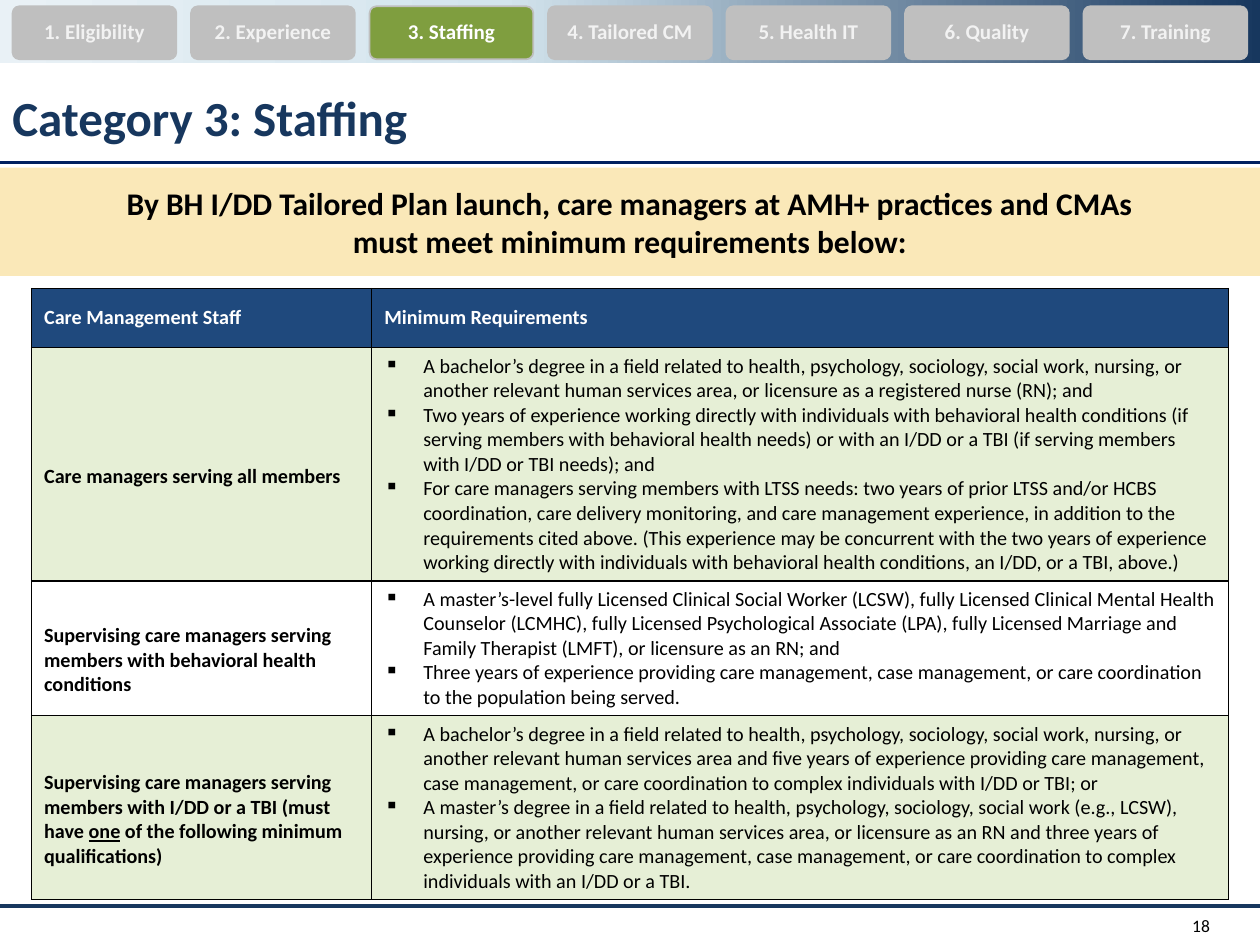
from collections import namedtuple

from lxml import etree
from pptx import Presentation
from pptx.dml.color import RGBColor
from pptx.enum.shapes import MSO_CONNECTOR, MSO_SHAPE
from pptx.enum.text import MSO_ANCHOR, PP_ALIGN
from pptx.oxml.ns import qn
from pptx.util import Inches, Pt

RECT, ROUNDED = MSO_SHAPE.RECTANGLE, MSO_SHAPE.ROUNDED_RECTANGLE
STRAIGHT = MSO_CONNECTOR.STRAIGHT
MIDDLE = MSO_ANCHOR.MIDDLE
LEFT, CENTER, RIGHT = PP_ALIGN.LEFT, PP_ALIGN.CENTER, PP_ALIGN.RIGHT

Box = namedtuple("Box", "left top width height")

THEME = {
    "font": "Calibri",
    "navy": "17375E", "rule": "002060", "header": "1F497D",
    "sand": "FAE8B8", "green": "7F9E3F", "pale_green": "E6EFD6",
    "grey": "BFBFBF", "light": "F2F2F2", "white": "FFFFFF", "black": "000000",
    "ribbon": [(0, "17375E"), (60, "D3E4ED"), (100, "E9F1F6")],
    "title": 28, "banner": 18, "tab": 12, "table": 11.5, "number": 10,
}

TABS = ["1. Eligibility", "2. Experience", "3. Staffing", "4. Tailored CM",
        "5. Health IT", "6. Quality", "7. Training"]
ACTIVE_TAB = "3. Staffing"
BANNER = ["By BH I/DD Tailored Plan launch, care managers at AMH+ practices and CMAs",
          "must meet minimum requirements below:"]
HEADINGS = ["Care Management Staff", "Minimum Requirements"]
COLUMN_WIDTHS = [2.7, 6.8]
HEADER_HEIGHT = 0.47
STAFF_ROWS = [
    (1.85, ["Care managers serving all members"], [
        "A bachelor’s degree in a field related to health, psychology, sociology, "
        "social work, nursing, or another relevant human services area, or licensure "
        "as a registered nurse (RN); and",
        "Two years of experience working directly with individuals with behavioral "
        "health conditions (if serving members with behavioral health needs) or with "
        "an I/DD or a TBI (if serving members with I/DD or TBI needs); and",
        "For care managers serving members with LTSS needs: two years of prior LTSS "
        "and/or HCBS coordination, care delivery monitoring, and care management "
        "experience, in addition to the requirements cited above. (This experience "
        "may be concurrent with the two years of experience working directly with "
        "individuals with behavioral health conditions, an I/DD, or a TBI, above.)",
    ]),
    (1.07, ["Supervising care managers serving members with behavioral health conditions"], [
        "A master’s-level fully Licensed Clinical Social Worker (LCSW), fully Licensed "
        "Clinical Mental Health Counselor (LCMHC), fully Licensed Psychological "
        "Associate (LPA), fully Licensed Marriage and Family Therapist (LMFT), or "
        "licensure as an RN; and",
        "Three years of experience providing care management, case management, or "
        "care coordination to the population being served.",
    ]),
    (1.46, ["Supervising care managers serving members with I/DD or a TBI (must have ",
            "one", " of the following minimum qualifications)"], [
        "A bachelor’s degree in a field related to health, psychology, sociology, "
        "social work, nursing, or another relevant human services area and five years "
        "of experience providing care management, case management, or care "
        "coordination to complex individuals with I/DD or TBI; or",
        "A master’s degree in a field related to health, psychology, sociology, "
        "social work (e.g., LCSW), nursing, or another relevant human services area, "
        "or licensure as an RN and three years of experience providing care "
        "management, case management, or care coordination to complex individuals "
        "with an I/DD or a TBI.",
    ]),
]


def color(name):
    """Return the theme colour with this name."""
    return RGBColor.from_string(THEME[name])


def place(box):
    """Return the four lengths of a box."""
    return [Inches(value) for value in box]


def apply(target, values):
    """Set attributes from a dict of format values."""
    for name, value in values.items():
        setattr(target, name, value)


def add_bullet(para):
    """Give a paragraph a square bullet with a hanging indent."""
    properties = para._p.get_or_add_pPr()
    properties.set("marL", str(Inches(0.31)))
    properties.set("indent", str(-Inches(0.31)))
    etree.SubElement(properties, qn("a:buChar"), char="▪")


def write(frame, paragraphs, size, tint, bold=True, align=LEFT, spacing=None, bullets=False):
    """Fill a frame with paragraphs of spans, underlining every second span."""
    for index, spans in enumerate(paragraphs):
        para = frame.paragraphs[0] if index == 0 else frame.add_paragraph()
        if bullets:
            add_bullet(para)
        apply(para, {"alignment": align, "line_spacing": spacing})
        for position, text in enumerate(spans):
            span = para.add_run()
            span.text = text
            apply(span.font, {"name": THEME["font"], "size": Pt(THEME[size]), "bold": bold,
                              "underline": position % 2 == 1})
            span.font.color.rgb = color(tint)


def set_frame(frame, across, down):
    """Wrap a frame, centre it vertically and set its insets."""
    apply(frame, {"word_wrap": True, "vertical_anchor": MIDDLE,
                  "margin_left": Inches(across), "margin_right": Inches(across),
                  "margin_top": Inches(down), "margin_bottom": Inches(down)})


def add_block(page, kind, box, fill, line=None):
    """Add a flat filled shape, outlined if a line colour is given."""
    shape = page.shapes.add_shape(kind, *place(box))
    shape.shadow.inherit = False
    shape.fill.solid()
    shape.fill.fore_color.rgb = color(fill)
    if line:
        shape.line.color.rgb = color(line)
        shape.line.width = Pt(1)
    else:
        shape.line.fill.background()
    return shape


def add_ribbon(page, box):
    """Add the gradient strip behind the tabs."""
    ribbon = add_block(page, RECT, box, "navy")
    ribbon.fill.gradient()
    ribbon.fill.gradient_angle = 180
    stops = ribbon._element.spPr.find(".//" + qn("a:gsLst"))
    for stop in list(stops):
        stops.remove(stop)
    for percent, value in THEME["ribbon"]:
        stop = etree.SubElement(stops, qn("a:gs"), pos=str(percent * 1000))
        etree.SubElement(stop, qn("a:srgbClr"), val=value)


def add_rule(page, top, tint, width):
    """Add a line across the whole page."""
    rule = page.shapes.add_connector(STRAIGHT, 0, Inches(top), Inches(10), Inches(top))
    rule.line.color.rgb = color(tint)
    rule.line.width = Pt(width)
    etree.SubElement(rule._element.spPr, qn("a:effectLst"))


def add_label(page, box, text, size, tint, **style):
    """Add a one-line text box."""
    frame = page.shapes.add_textbox(*place(box)).text_frame
    set_frame(frame, 0.1, 0.05)
    write(frame, [[text]], size, tint, **style)


def add_banner(page, box):
    """Add the sand-coloured statement band."""
    frame = add_block(page, RECT, box, "sand").text_frame
    set_frame(frame, 0.3, 0.06)
    write(frame, [[text] for text in BANNER], "banner", "black", align=CENTER)


def add_tabs(page, box, tab_width=1.3):
    """Spread the category tabs evenly over the box."""
    pitch = (box.width - tab_width) / (len(TABS) - 1)
    for index, text in enumerate(TABS):
        active = text == ACTIVE_TAB
        spot = Box(box.left + index * pitch, box.top, tab_width, box.height)
        tab = add_block(page, ROUNDED, spot, "green" if active else "grey", "grey")
        tab.adjustments[0] = 0.13
        set_frame(tab.text_frame, 0.07, 0.07)
        write(tab.text_frame, [[text]], "tab", "white" if active else "light",
              align=CENTER, spacing=0.9)


def style_cell(cell, fill, extra_top=0):
    """Fill a cell, centre it vertically and draw its black borders."""
    cell.fill.solid()
    cell.fill.fore_color.rgb = color(fill)
    apply(cell, {"vertical_anchor": MIDDLE, "margin_top": Inches(0.05 + extra_top)})
    properties = cell._tc.get_or_add_tcPr()
    for index, side in enumerate(("lnL", "lnR", "lnT", "lnB")):
        border = etree.Element(qn("a:" + side), w=str(Pt(1)))
        solid = etree.SubElement(border, qn("a:solidFill"))
        etree.SubElement(solid, qn("a:srgbClr"), val=THEME["black"])
        properties.insert(index, border)


def add_staff_table(page, box):
    """Add the table of staff types and their minimum requirements."""
    table = page.shapes.add_table(len(STAFF_ROWS) + 1, 2, *place(box)).table
    apply(table, {"first_row": False, "horz_banding": False})
    for column, width in zip(table.columns, COLUMN_WIDTHS):
        column.width = Inches(width)
    table.rows[0].height = Inches(HEADER_HEIGHT)
    for cell, text in zip(table.rows[0].cells, HEADINGS):
        style_cell(cell, "header")
        write(cell.text_frame, [[text]], "table", "white")
    for index, (height, staff, needs) in enumerate(STAFF_ROWS, 1):
        table.rows[index].height = Inches(height)
        fill = "pale_green" if index % 2 else "white"
        name, details = table.rows[index].cells
        style_cell(name, fill, 0.19)
        write(name.text_frame, [staff], "table", "black")
        style_cell(details, fill)
        write(details.text_frame, [[text] for text in needs], "table", "black",
              bold=False, bullets=True)


def build_staffing_page(deck):
    """Lay out the staffing requirements page."""
    page = deck.slides.add_slide(deck.slide_layouts[6])
    add_ribbon(page, Box(0, 0, 10, 0.5))
    add_rule(page, 7.19, "navy", 2.25)
    add_rule(page, 1.29, "rule", 2)
    add_label(page, Box(0, 0.67, 9.7, 0.58), ACTIVE_TAB.replace("3.", "Category 3:"),
              "title", "navy", spacing=0.9)
    add_label(page, Box(9.08, 7.19, 0.62, 0.31), "18", "number", "black",
              bold=False, align=RIGHT)
    add_banner(page, Box(0, 1.33, 10, 0.86))
    add_staff_table(page, Box(0.25, 2.29, 9.5, 4.85))
    add_tabs(page, Box(0.1, 0.05, 9.8, 0.42))


def main():
    """Build and save the deck."""
    deck = Presentation()
    apply(deck, {"slide_width": Inches(10), "slide_height": Inches(7.5)})
    build_staffing_page(deck)
    deck.save("out.pptx")


if __name__ == "__main__":
    main()
